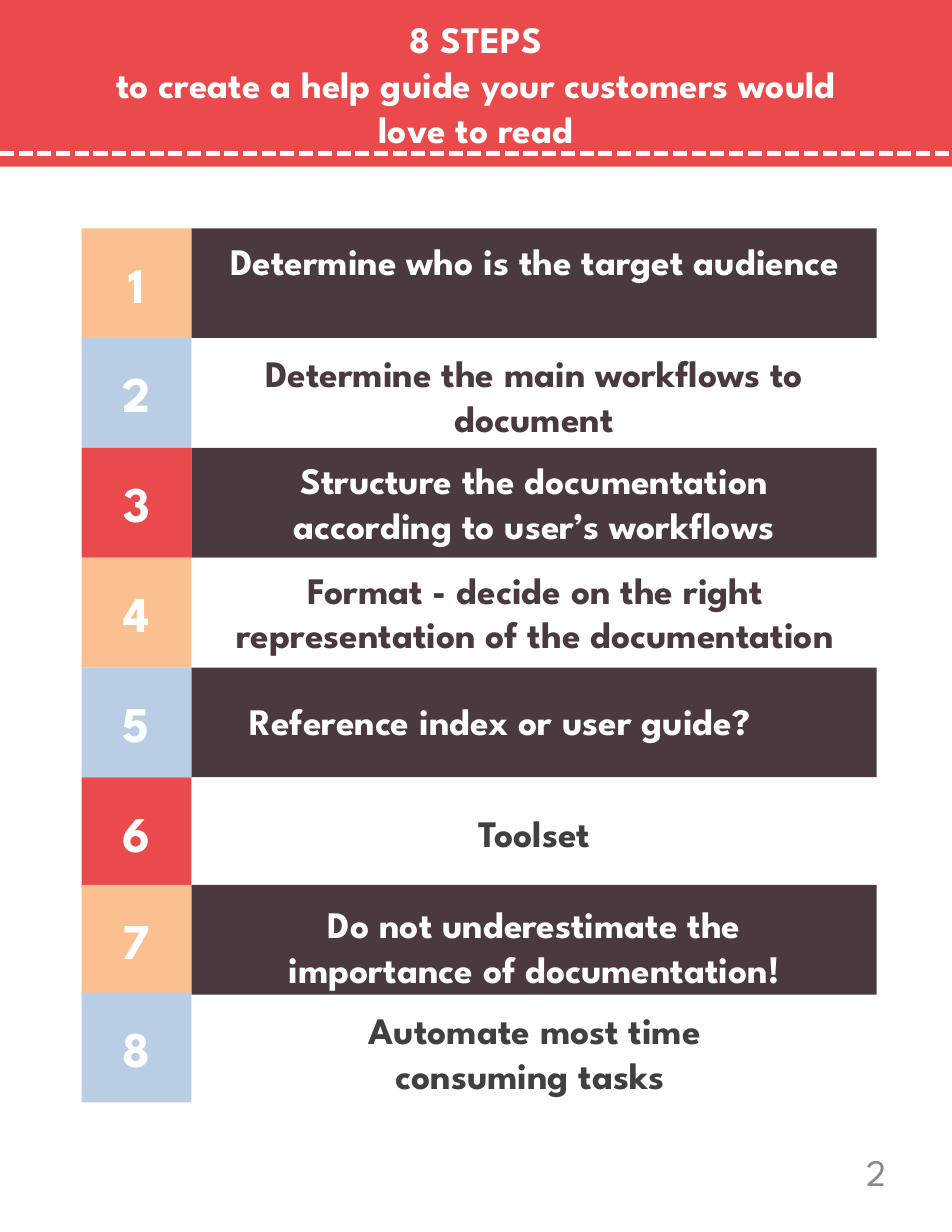
from lxml.etree import SubElement
from pptx import Presentation
from pptx.dml.color import RGBColor
from pptx.enum.dml import MSO_LINE as Dash
from pptx.enum.shapes import MSO_CONNECTOR as Link, MSO_SHAPE as Kind
from pptx.enum.text import MSO_ANCHOR as Anchor, MSO_AUTO_SIZE as Auto, PP_ALIGN as Align
from pptx.oxml.ns import qn
from pptx.util import Cm, Pt

FONT = "League Spartan"
RED = RGBColor(0xEA, 0x4A, 0x4B)
PEACH = RGBColor(0xFA, 0xC0, 0x90)
BLUE = RGBColor(0xB9, 0xCD, 0xE5)
PLUM = RGBColor(0x4A, 0x3A, 0x40)
WHITE = RGBColor(0xFF, 0xFF, 0xFF)
DARK = RGBColor(0x40, 0x40, 0x40)
GREY = RGBColor(0x89, 0x89, 0x89)

WIDE, TALL = 21.59, 27.94
LEFT, TOP, SIDE, BAR = 1.85, 5.18, 2.49, 15.54
TILES = (PEACH, BLUE, RED)

# Step text, text colour, and box: left, top, width, height in cm
STEPS = [
    ("Determine who is the target audience", WHITE, (4.65, 5.28, 14.96, 3.33)),
    ("Determine the main workflows to document", PLUM, (4.7, 7.82, 14.83, 2.31)),
    ("Structure the documentation according to user’s workflows", WHITE,
     (4.7, 10.24, 14.83, 2.31)),
    ("Format - decide on the right representation of the documentation", PLUM,
     (4.29, 12.73, 15.7, 2.31)),
    ("Reference index or user guide?", WHITE, (5.41, 15.7, 13.46, 1.3)),
    ("Toolset", DARK, (4.78, 18.24, 14.68, 1.27)),
    ("Do not underestimate the importance of documentation!", WHITE,
     (5.41, 20.32, 13.41, 2.31)),
    ("Automate most time consuming tasks ", DARK, (6.73, 22.71, 10.8, 2.31)),
]


def write(frame, text, color, size=24, bold=True, align=Align.CENTER):
    frame.word_wrap = True
    frame.text = text
    for para in frame.paragraphs:
        para.alignment = align
        font = para.font
        font.name, font.size, font.bold = FONT, Pt(size), bold
        font.color.rgb = color


def add_rect(slide, box, fill):
    rect = slide.shapes.add_shape(Kind.RECTANGLE, *map(Cm, box))
    rect.shadow.inherit = False
    rect.fill.solid()
    rect.fill.fore_color.rgb = fill
    rect.line.fill.background()
    return rect


def add_text(slide, box, text, color, **style):
    frame = slide.shapes.add_textbox(*map(Cm, box)).text_frame
    write(frame, text, color, **style)
    return frame


def add_title(slide):
    title = slide.shapes.title
    title.left, title.top, title.width, title.height = map(Cm, (0, 0, WIDE, 3.78))
    title.fill.solid()
    title.fill.fore_color.rgb = RED
    frame = title.text_frame
    frame.auto_size = Auto.NONE
    frame.vertical_anchor = Anchor.MIDDLE
    write(frame, "8 STEPS\nto create a help guide your customers would\nlove to read", WHITE)


def add_stitch(slide, y):
    line = slide.shapes.add_connector(Link.STRAIGHT, Cm(0), Cm(y), Cm(WIDE), Cm(y))
    line.line.color.rgb = WHITE
    line.line.width = Pt(3)
    line.line.dash_style = Dash.SQUARE_DOT
    SubElement(line._element.spPr, qn("a:effectLst"))


def add_step(slide, i, text, color, box):
    # The last two rows overlap slightly
    top = TOP + i * SIDE - 0.05 * max(0, i - 5)
    if i < len(STEPS) - 1:
        add_rect(slide, (LEFT + SIDE, top, BAR, SIDE), WHITE if i % 2 else PLUM)
    tile = add_rect(slide, (LEFT, top, SIDE, SIDE), TILES[i % 3])
    tile.text_frame.vertical_anchor = Anchor.MIDDLE
    write(tile.text_frame, str(i + 1), WHITE, size=32)


def main():
    deck = Presentation()
    deck.slide_width, deck.slide_height = Cm(WIDE), Cm(TALL)
    slide = deck.slides.add_slide(deck.slide_layouts[5])

    # Banner
    add_title(slide)
    add_stitch(slide, 3.48)

    # Numbered rows, then their text on top
    for i, step in enumerate(STEPS):
        add_step(slide, i, *step)
    for i, (text, color, box) in enumerate(STEPS):
        align = Align.LEFT if i == 4 else Align.CENTER
        add_text(slide, box, text, color, align=align)

    # Page number
    page = add_text(slide, (15.32, 25.81, 5.03, 1.5), "2", GREY, bold=False, align=Align.RIGHT)
    page.vertical_anchor = Anchor.MIDDLE

    deck.save("out.pptx")


if __name__ == "__main__":
    main()
